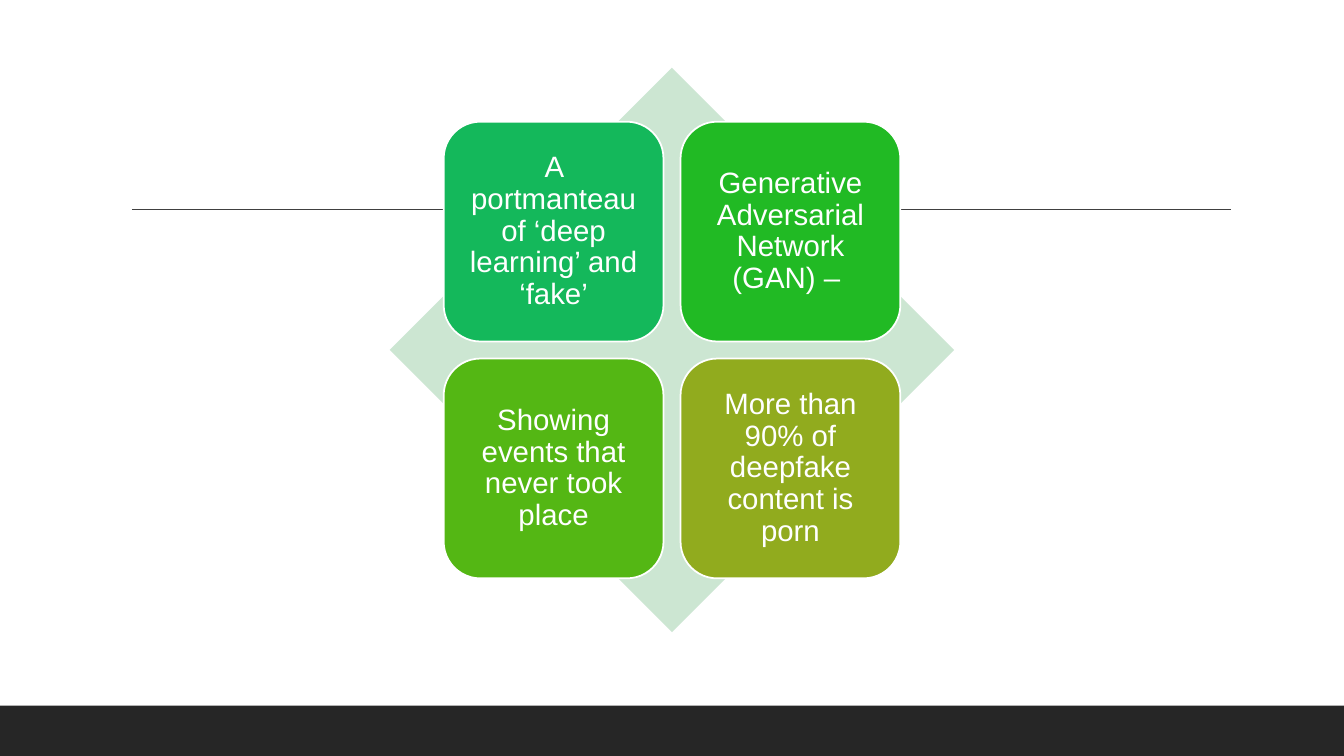
from dataclasses import dataclass

from lxml.etree import SubElement
from pptx import Presentation
from pptx.dml.color import RGBColor
from pptx.enum.shapes import MSO_CONNECTOR, MSO_SHAPE
from pptx.enum.text import MSO_ANCHOR, PP_ALIGN
from pptx.oxml.ns import qn
from pptx.shapes.autoshape import Shape
from pptx.slide import Slide
from pptx.util import Pt

WHITE = RGBColor(0xFF, 0xFF, 0xFF)
FOOTER_GREY = RGBColor(0x26, 0x26, 0x26)
RULE_GREY = RGBColor(0x40, 0x40, 0x40)
PALE_GREEN = RGBColor(0xCC, 0xE6, 0xD2)
TEAL_GREEN = RGBColor(0x14, 0xB8, 0x5B)
GREEN = RGBColor(0x21, 0xBA, 0x24)
LEAF_GREEN = RGBColor(0x54, 0xB7, 0x14)
OLIVE = RGBColor(0x91, 0xAB, 0x1E)

# Lengths in points
SLIDE_WIDTH, SLIDE_HEIGHT = 960, 540
FOOTER_HEIGHT = 36
RULE_LEFT, RULE_RIGHT, RULE_TOP = 94.3, 879, 149.5
CENTER_X, CENTER_Y = 480, 250
DIAMOND_SIZE = 403.2
TILE_SIZE = 157
TILE_GAP = 12.2
TILE_INSET = 6.6


@dataclass(frozen=True)
class Tile:
    row: int
    column: int
    text: str
    color: RGBColor


TILES = [
    Tile(0, 0, "A portmanteau of ‘deep learning’ and ‘fake’", TEAL_GREEN),
    Tile(0, 1, "Generative Adversarial Network (GAN) – ", GREEN),
    Tile(1, 0, "Showing events that never took place", LEAF_GREEN),
    Tile(1, 1, "More than 90% of deepfake content is porn", OLIVE),
]


def add_filled_shape(slide: Slide, kind: MSO_SHAPE, left: float, top: float,
                     width: float, height: float, color: RGBColor) -> Shape:
    shape = slide.shapes.add_shape(kind, Pt(left), Pt(top), Pt(width), Pt(height))
    shape.shadow.inherit = False
    shape.fill.solid()
    shape.fill.fore_color.rgb = color
    shape.line.fill.background()
    return shape


def add_rule(slide: Slide) -> None:
    """Draw the horizontal line that runs behind the diagram."""
    rule = slide.shapes.add_connector(
        MSO_CONNECTOR.STRAIGHT, Pt(RULE_LEFT), Pt(RULE_TOP), Pt(RULE_RIGHT), Pt(RULE_TOP))
    rule.line.color.rgb = RULE_GREY
    rule.line.width = Pt(1)
    SubElement(rule.element.spPr, qn("a:effectLst"))


def add_tile(slide: Slide, tile: Tile) -> None:
    pitch = TILE_SIZE + TILE_GAP
    first_offset = TILE_SIZE + TILE_GAP / 2
    shape = add_filled_shape(
        slide, MSO_SHAPE.ROUNDED_RECTANGLE,
        CENTER_X - first_offset + tile.column * pitch,
        CENTER_Y - first_offset + tile.row * pitch,
        TILE_SIZE, TILE_SIZE, tile.color)
    shape.line.color.rgb = WHITE
    shape.line.width = Pt(1.25)

    text_frame = shape.text_frame
    text_frame.text = tile.text
    text_frame.word_wrap = True
    text_frame.vertical_anchor = MSO_ANCHOR.MIDDLE
    text_frame.margin_left = text_frame.margin_right = Pt(TILE_INSET)
    text_frame.margin_top = text_frame.margin_bottom = Pt(TILE_INSET)
    paragraph = text_frame.paragraphs[0]
    paragraph.alignment = PP_ALIGN.CENTER
    paragraph.line_spacing = 0.9
    font = paragraph.runs[0].font
    font.name = "Arial"
    font.size = Pt(21)
    font.color.rgb = WHITE


def main() -> None:
    presentation = Presentation()
    presentation.slide_width = Pt(SLIDE_WIDTH)
    presentation.slide_height = Pt(SLIDE_HEIGHT)
    slide = presentation.slides.add_slide(presentation.slide_layouts[6])

    add_filled_shape(slide, MSO_SHAPE.RECTANGLE, 0, SLIDE_HEIGHT - FOOTER_HEIGHT,
                     SLIDE_WIDTH, FOOTER_HEIGHT, FOOTER_GREY)
    add_rule(slide)
    add_filled_shape(slide, MSO_SHAPE.DIAMOND, CENTER_X - DIAMOND_SIZE / 2,
                     CENTER_Y - DIAMOND_SIZE / 2, DIAMOND_SIZE, DIAMOND_SIZE, PALE_GREEN)
    for tile in TILES:
        add_tile(slide, tile)

    presentation.save("out.pptx")


if __name__ == "__main__":
    main()
